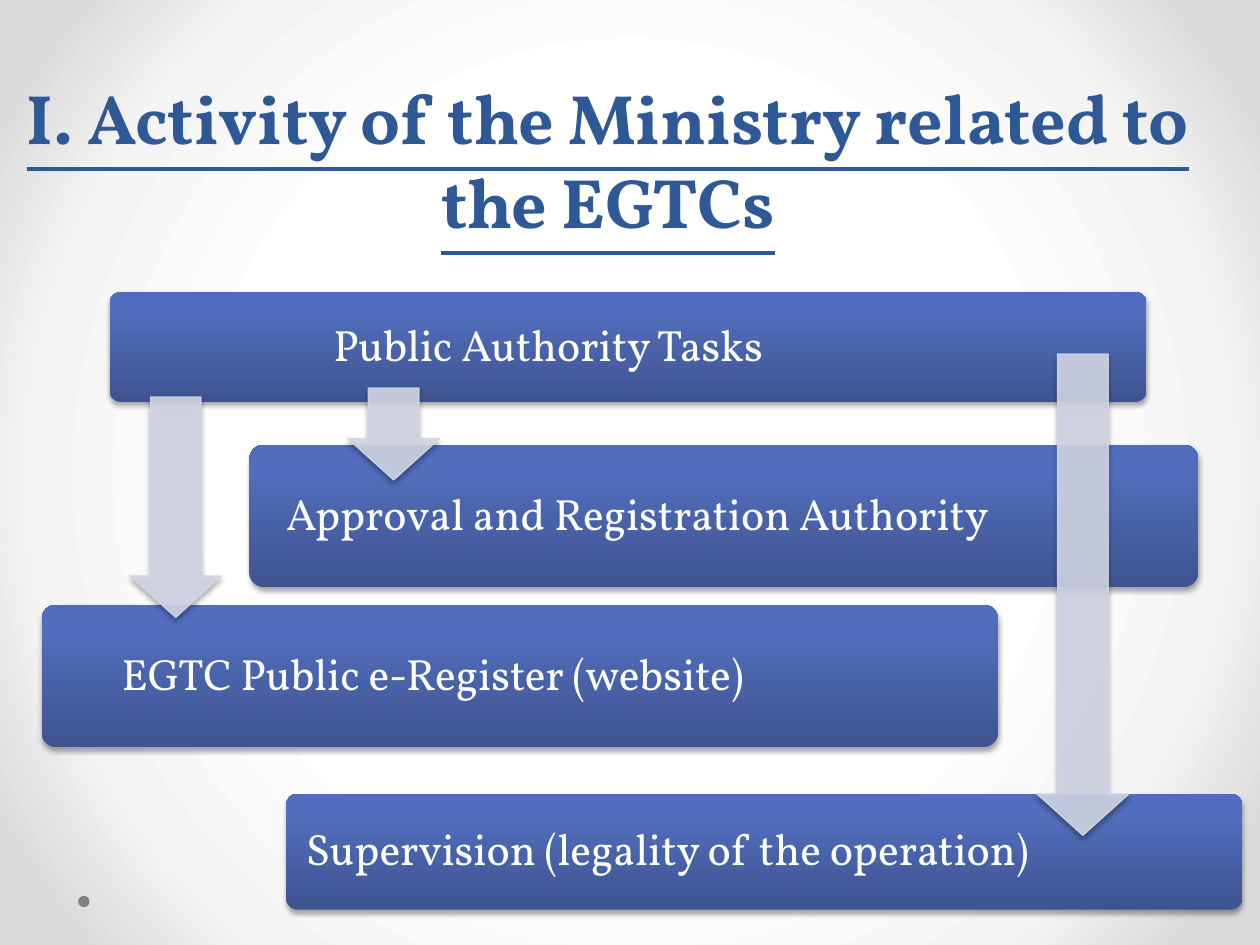
"""Build the slide on the ministry's activity related to the EGTCs."""
from dataclasses import dataclass

import pptx
import pptx.dml.color
import pptx.enum.shapes
import pptx.enum.text
import pptx.oxml
import pptx.oxml.ns
import pptx.util

Inches, Pt = pptx.util.Inches, pptx.util.Pt
Preset = pptx.enum.shapes.MSO_SHAPE
Align = pptx.enum.text.PP_ALIGN
Anchor = pptx.enum.text.MSO_ANCHOR


@dataclass(frozen=True)
class Theme:
    font: str = "Vollkorn"
    title_size: int = 40
    task_size: int = 25
    title: str = "2F5897"
    task_text: str = "FFFFFF"
    arrow: str = "D2D6E5"
    dot: str = "808080"
    bar: tuple = ((0, "3E5490"), (80, "516DBB"), (100, "4F6CBE"))
    backdrop: tuple = ((50, "FFFFFF"), (76, "F4F4F4"), (92, "DADADA"))


THEME = Theme()
WIDTH, HEIGHT = 10, 7.5
TITLE = "I. Activity of the Ministry related to the EGTCs"
TITLE_BOX = (0, 0.54, 9.65, 1.45)
DOT_BOX = (0.62, 7.11, 0.09, 0.09)
TASKS = [
    (" Public Authority Tasks", (0.87, 2.32, 8.23, 0.87), 0.83, Align.CENTER),
    ("Approval and Registration Authority", (1.98, 3.53, 7.53, 1.13), 0.81, Align.CENTER),
    ("EGTC Public e-Register (website)", (0.33, 4.8, 7.59, 1.13), 0.81, Align.CENTER),
    ("Supervision (legality of the operation)", (2.27, 6.3, 7.59, 0.92), 0.81, Align.LEFT),
]
ARROW_WIDTH = 0.73
ARROWS = [(8.23, 2.81, 6.63), (2.76, 3.08, 3.81), (1.03, 3.15, 4.9)]
PADDING, EDGE = 0.1, 0.03
LINEAR = '<a:lin {ns} ang="16200000" scaled="0"/>'
RADIAL = ('<a:path {ns} path="circle">'
          '<a:fillToRect l="50000" t="50000" r="50000" b="50000"/></a:path>')


def xml(markup):
    return pptx.oxml.parse_xml(markup.replace("{ns}", pptx.oxml.ns.nsdecls("a")))


def color(value):
    return pptx.dml.color.RGBColor.from_string(value)


def paint_gradient(owner, fill, stops, direction):
    fill.gradient()
    gradient = owner._element.find(".//" + pptx.oxml.ns.qn("a:gradFill"))
    for child in list(gradient):
        gradient.remove(child)
    marks = "".join(f'<a:gs pos="{share * 1000}"><a:srgbClr val="{tone}"/></a:gs>'
                    for share, tone in stops)
    gradient.append(xml("<a:gsLst {ns}>" + marks + "</a:gsLst>"))
    gradient.append(xml(direction))


def cast_shadow(shape):
    shape.shadow.inherit = False
    effects = shape._element.spPr.find(pptx.oxml.ns.qn("a:effectLst"))
    effects.append(xml(
        f'<a:outerShdw {{ns}} blurRad="{Pt(3.1)}" dist="{Pt(1.8)}" dir="5400000" rotWithShape="0">'
        '<a:srgbClr val="000000"><a:alpha val="35000"/></a:srgbClr></a:outerShdw>'))


def add_preset(slide, preset, box):
    return slide.shapes.add_shape(preset, *map(Inches, box))


def style_text(paragraph, size, tone, align):
    paragraph.alignment = align
    font = paragraph.runs[0].font
    font.name, font.size, font.color.rgb = THEME.font, Pt(size), color(tone)
    return font


def add_title(slide):
    title = slide.shapes.title
    title.left, title.top, title.width, title.height = map(Inches, TITLE_BOX)
    frame = title.text_frame
    frame.text = TITLE
    frame.word_wrap = True
    frame.auto_size = pptx.enum.text.MSO_AUTO_SIZE.NONE
    frame.vertical_anchor = Anchor.TOP
    font = style_text(frame.paragraphs[0], THEME.title_size, THEME.title, Align.CENTER)
    font.bold = font.underline = True


def add_dot(slide):
    dot = add_preset(slide, Preset.OVAL, DOT_BOX)
    dot.shadow.inherit = False
    dot.fill.solid()
    dot.fill.fore_color.rgb = color(THEME.dot)
    dot.line.fill.background()


def add_task(slide, label, box, text_share, align):
    bar = add_preset(slide, Preset.ROUNDED_RECTANGLE, box)
    bar.adjustments[0] = 0.1
    paint_gradient(bar, bar.fill, THEME.bar, LINEAR)
    bar.line.fill.background()
    cast_shadow(bar)
    frame = bar.text_frame
    frame.text = label
    frame.word_wrap = True
    frame.vertical_anchor = Anchor.MIDDLE
    frame.margin_left = Inches(EDGE + PADDING)
    frame.margin_right = Inches(box[2] * (1 - text_share) - EDGE + PADDING)
    frame.margin_top = frame.margin_bottom = Inches(PADDING)
    frame.paragraphs[0].line_spacing = 0.9
    style_text(frame.paragraphs[0], THEME.task_size, THEME.task_text, align)


def add_arrow(slide, left, top, tip):
    arrow = add_preset(slide, Preset.DOWN_ARROW, (left, top, ARROW_WIDTH, tip - top))
    arrow.adjustments[0], arrow.adjustments[1] = 0.55, 0.45
    arrow.fill.solid()
    arrow.fill.fore_color.rgb = color(THEME.arrow)
    arrow.line.color.rgb = color(THEME.arrow)
    arrow.line.width = Pt(0.75)
    for tone in arrow._element.spPr.findall(".//" + pptx.oxml.ns.qn("a:srgbClr")):
        tone.append(xml('<a:alpha {ns} val="90000"/>'))
    cast_shadow(arrow)


def main():
    deck = pptx.Presentation()
    deck.slide_width, deck.slide_height = Inches(WIDTH), Inches(HEIGHT)
    slide = deck.slides.add_slide(deck.slide_layouts.get_by_name("Title Only"))
    paint_gradient(slide, slide.background.fill, THEME.backdrop, RADIAL)
    add_title(slide)
    add_dot(slide)
    for task in TASKS:
        add_task(slide, *task)
    for arrow in ARROWS:
        add_arrow(slide, *arrow)
    deck.save("out.pptx")


if __name__ == "__main__":
    main()
